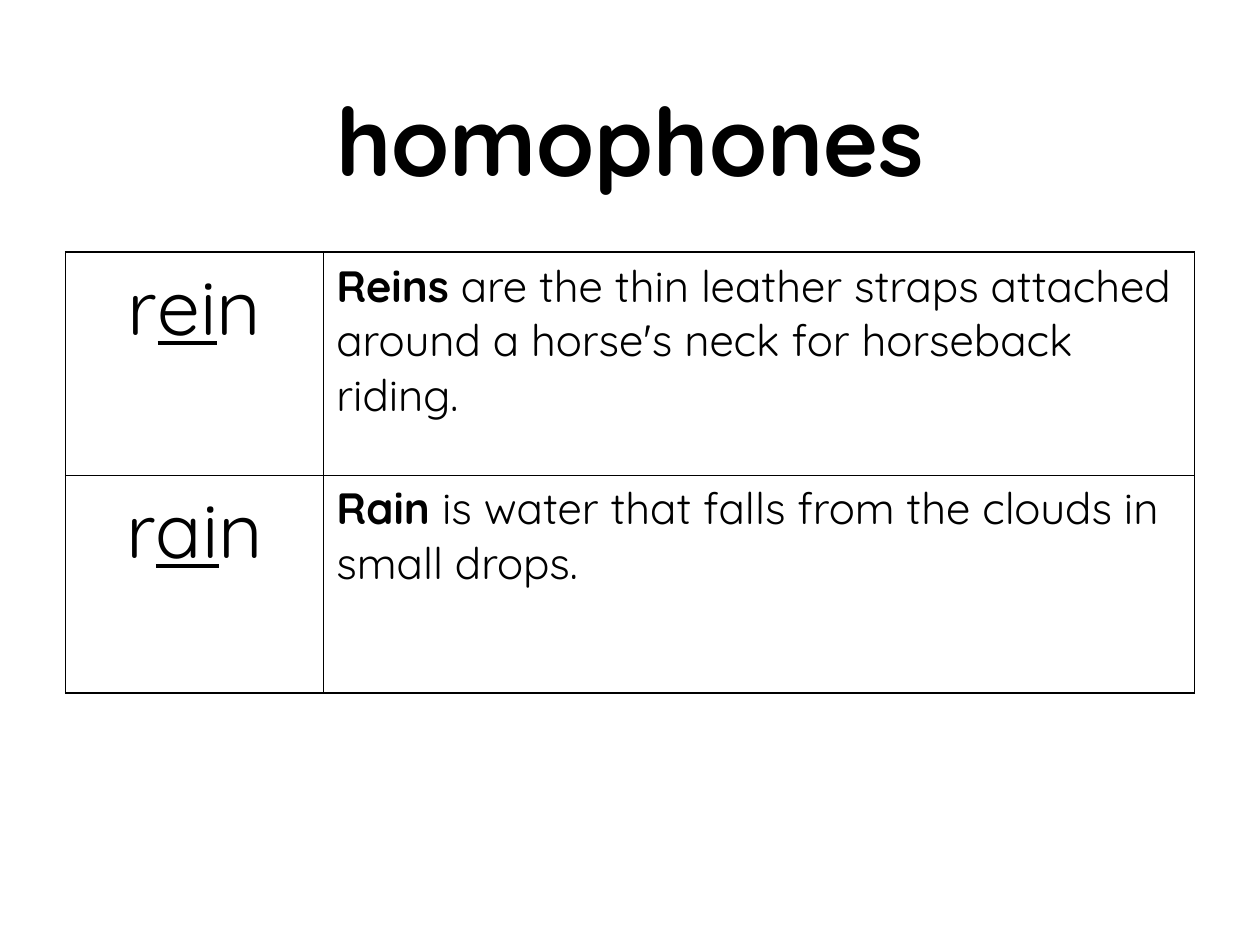
from lxml.etree import SubElement
from pptx import Presentation
from pptx.dml.color import RGBColor
from pptx.enum.text import MSO_ANCHOR, MSO_AUTO_SIZE, PP_ALIGN
from pptx.oxml.ns import qn
from pptx.util import Inches, Pt

COLORS = {"text": "000000", "border": "000000", "cell": "FFFFFF"}
FONT = "Quicksand"
OUTER_BORDER = Pt(1)
INNER_BORDER = Pt(0.5)

# Each row: runs of the word (text, underlined), then runs of the meaning (text, bold)
HOMOPHONES = [
    (
        [("r", False), ("ei", True), ("n", False)],
        [("Reins", True),
         (" are the thin leather straps attached around a horse's neck for horseback riding.", False)],
    ),
    (
        [("r", False), ("ai", True), ("n", False)],
        [("Rain", True), (" is water that falls from the clouds in small drops.", False)],
    ),
]


class SlideBuilder:
    def __init__(self, slide):
        self.slide = slide

    def style(self, paragraph, size, alignment):
        paragraph.alignment = alignment
        paragraph.font.name = FONT
        paragraph.font.size = Pt(size)
        paragraph.font.color.rgb = RGBColor.from_string(COLORS["text"])

    def title(self, text, left, top, width, height):
        shape = self.slide.shapes.title
        shape.left, shape.top = Inches(left), Inches(top)
        shape.width, shape.height = Inches(width), Inches(height)
        frame = shape.text_frame
        frame.text = text
        frame.word_wrap = True
        frame.auto_size = MSO_AUTO_SIZE.NONE
        frame.vertical_anchor = MSO_ANCHOR.TOP
        paragraph = frame.paragraphs[0]
        paragraph.line_spacing = 0.9
        self.style(paragraph, 54, PP_ALIGN.CENTER)
        paragraph.font.bold = True

    def borders(self, cell, widths):
        """Draw the left, right, top and bottom borders of a cell."""
        properties = cell._tc.get_or_add_tcPr()
        for side, width in zip("LRTB", widths):
            line = SubElement(properties, qn(f"a:ln{side}"), w=str(width))
            fill = SubElement(line, qn("a:solidFill"))
            SubElement(fill, qn("a:srgbClr"), val=COLORS["border"])

    def cell(self, cell, runs, emphasis, size, alignment):
        """Fill a cell with runs, setting the font attribute named by emphasis."""
        paragraph = cell.text_frame.paragraphs[0]
        self.style(paragraph, size, alignment)
        for text, emphasized in runs:
            run = paragraph.add_run()
            run.text = text
            setattr(run.font, emphasis, emphasized)
        cell.fill.solid()
        cell.fill.fore_color.rgb = RGBColor.from_string(COLORS["cell"])

    def table(self, rows, left, top, column_widths, row_heights):
        frame = self.slide.shapes.add_table(
            len(rows), len(column_widths), Inches(left), Inches(top),
            Inches(sum(column_widths)), Inches(sum(row_heights)))
        table = frame.table
        table.first_row = table.horz_banding = False
        for column, width in zip(table.columns, column_widths):
            column.width = Inches(width)
        last_row, last_column = len(rows) - 1, len(column_widths) - 1
        for index, (word, meaning) in enumerate(rows):
            table.rows[index].height = Inches(row_heights[index])
            for column in range(len(column_widths)):
                at_edge = (column == 0, column == last_column, index == 0, index == last_row)
                widths = [OUTER_BORDER if edge else INNER_BORDER for edge in at_edge]
                self.borders(table.cell(index, column), widths)
            self.cell(table.cell(index, 0), word, "underline", 44, PP_ALIGN.CENTER)
            self.cell(table.cell(index, 1), meaning, "bold", 25, PP_ALIGN.LEFT)


def main():
    presentation = Presentation()
    presentation.slide_width, presentation.slide_height = Inches(10), Inches(7.5)
    title_only = presentation.slide_layouts[5]
    builder = SlideBuilder(presentation.slides.add_slide(title_only))
    builder.table(HOMOPHONES, 0.52, 2, [2.05, 6.91], [1.77, 1.73])
    builder.title("homophones", 0, 0.7, 10, 1.45)
    presentation.save("out.pptx")


if __name__ == "__main__":
    main()
